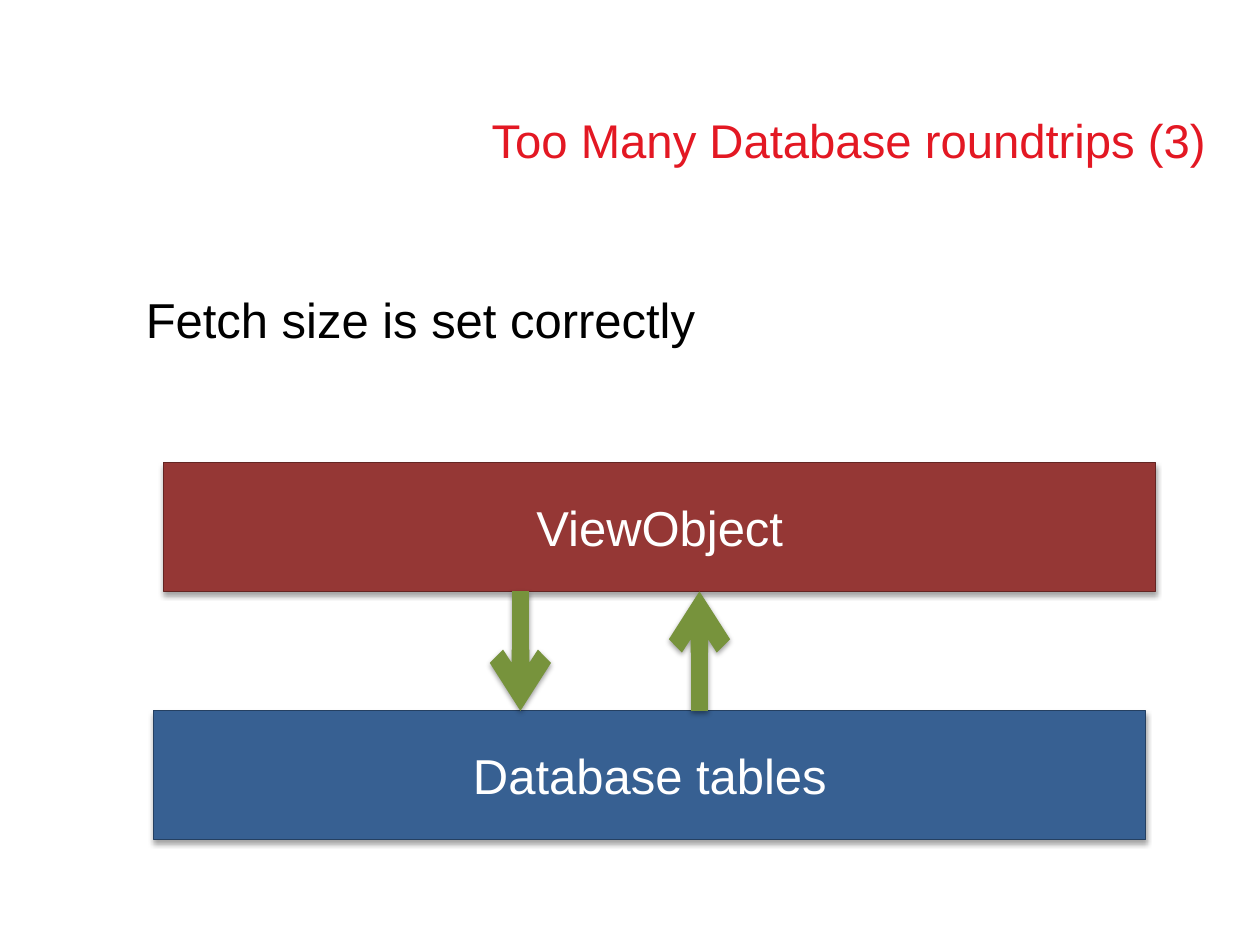
from pptx import Presentation
from pptx.dml.color import RGBColor
from pptx.enum.shapes import MSO_CONNECTOR as CONN, MSO_SHAPE as SHAPE
from pptx.enum.text import MSO_ANCHOR as ANCHOR, PP_ALIGN as ALIGN
from pptx.oxml import parse_xml
from pptx.oxml.ns import nsdecls
from pptx.util import Cm, Pt


def rgb(value):
    """Return the colour for a hex string."""
    return RGBColor.from_string(value)


def add_shadow(sp, alpha, dist):
    """Give a shape or connector a soft shadow straight below it."""
    sp_pr = sp._element.spPr
    sp_pr.append(parse_xml(
        f'<a:effectLst {nsdecls("a")}>'
        f'<a:outerShdw blurRad="{Pt(3.1)}" dist="{Pt(dist)}" dir="5400000" rotWithShape="0">'
        f'<a:srgbClr val="000000"><a:alpha val="{alpha * 1000}"/></a:srgbClr>'
        '</a:outerShdw></a:effectLst>'))


def add_run(p, text, size, color):
    """Add one Arial run to a paragraph."""
    r = p.add_run()
    r.text = text
    r.font.name = "Arial"
    r.font.size = Pt(size)
    r.font.color.rgb = rgb(color)


def add_title(s, text):
    """Add the slide title."""
    tf = s.shapes.add_textbox(Cm(9.91), Cm(1.52), Cm(14.6), Cm(2.74)).text_frame
    tf.word_wrap = True
    tf.vertical_anchor = ANCHOR.MIDDLE
    tf.margin_left = tf.margin_right = tf.margin_top = tf.margin_bottom = 0
    p = tf.paragraphs[0]
    p.line_spacing = Pt(28)
    add_run(p, text, 27, "E31823")


def add_statement(s, text):
    """Add the statement above the diagram."""
    tf = s.shapes.add_textbox(Cm(2.69), Cm(5.72), Cm(11.71), Cm(1.45)).text_frame
    tf.word_wrap = False
    add_run(tf.paragraphs[0], text, 28, "000000")


def add_layer(s, text, left, top, fill, line):
    """Add a wide labelled box for one layer."""
    sp = s.shapes.add_shape(SHAPE.RECTANGLE, Cm(left), Cm(top), Cm(20), Cm(2.6))
    sp.fill.solid()
    sp.fill.fore_color.rgb = rgb(fill)
    sp.line.color.rgb = rgb(line)
    sp.line.width = Pt(0.75)
    add_shadow(sp, 35, 1.8)
    tf = sp.text_frame
    tf.vertical_anchor = ANCHOR.MIDDLE
    p = tf.paragraphs[0]
    p.alignment = ALIGN.CENTER
    add_run(p, text, 28, "FFFFFF")


def add_arrow(s, x, start, end):
    """Add a thick vertical arrow between the layers."""
    cxn = s.shapes.add_connector(CONN.STRAIGHT, Cm(x), Cm(start), Cm(x), Cm(end))
    cxn.line.color.rgb = rgb("77933C")
    cxn.line.width = Pt(10)
    cxn.line._get_or_add_ln().append(
        parse_xml(f'<a:tailEnd {nsdecls("a")} type="arrow"/>'))
    add_shadow(cxn, 38, 1.6)


def main():
    """Build and save the slide."""
    prs = Presentation()
    prs.slide_width, prs.slide_height = Cm(25.4), Cm(19.05)
    s = prs.slides.add_slide(prs.slide_layouts[6])
    view_bottom, table_top = 11.92, 14.33
    add_title(s, "Too Many Database roundtrips (3)")
    add_layer(s, "Database tables", 3.1, table_top, "376092", "254061")
    add_layer(s, "ViewObject", 3.3, view_bottom - 2.6, "953735", "632523")
    add_statement(s, "Fetch size is set correctly")
    add_arrow(s, 10.49, view_bottom, table_top)
    add_arrow(s, 14.1, table_top, view_bottom)
    prs.save("out.pptx")


if __name__ == "__main__":
    main()
